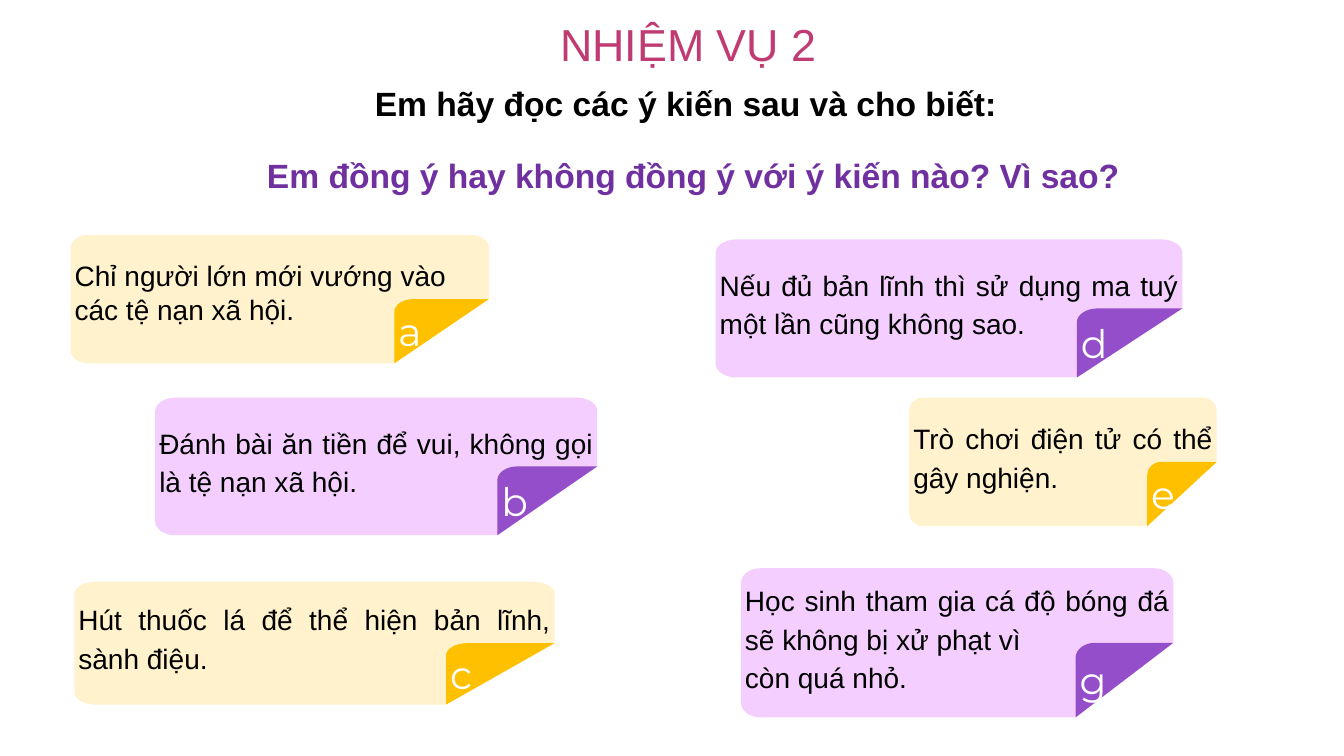
from lxml.etree import SubElement
from pptx import Presentation
from pptx.dml.color import RGBColor
from pptx.enum.shapes import MSO_SHAPE
from pptx.enum.text import MSO_ANCHOR, MSO_AUTO_SIZE, PP_ALIGN
from pptx.oxml.ns import qn
from pptx.util import Inches, Pt

WHITE = RGBColor(0xFF, 0xFF, 0xFF)
BLACK = RGBColor(0x00, 0x00, 0x00)
ROSE = RGBColor(0xBF, 0x3B, 0x72)
PURPLE = RGBColor(0x70, 0x30, 0xA0)
CREAM = RGBColor(0xFF, 0xF2, 0xCC)
GOLD = RGBColor(0xFF, 0xC0, 0x00)
LILAC = RGBColor(0xF3, 0xCE, 0xFE)
VIOLET = RGBColor(0x95, 0x4E, 0xCA)
WARM, COOL = (CREAM, GOLD), (LILAC, VIOLET)

CARDS = [
    ("a", "Chỉ người lớn mới vướng vào các tệ nạn xã hội.",
     (7, 23.3, 41.5, 12.75), WARM, PP_ALIGN.LEFT, 1),
    ("d", "Nếu đủ bản lĩnh thì sử dụng ma tuý một lần cũng không sao.",
     (71, 23.75, 46.3, 13.7), COOL, PP_ALIGN.JUSTIFY, 1.15),
    ("b", "Đánh bài ăn tiền để vui, không gọi là tệ nạn xã hội.",
     (15.4, 39.45, 43.85, 13.65), COOL, PP_ALIGN.JUSTIFY, 1.15),
    ("c", "Hút thuốc lá để thể hiện bản lĩnh, sành điệu.",
     (7.37, 57.7, 47.65, 12.2), WARM, PP_ALIGN.JUSTIFY, 1.15),
    ("g", "Học sinh tham gia cá độ bóng đá sẽ không bị xử phạt vì\ncòn quá nhỏ.",
     (73.5, 56.37, 42.9, 14.8), COOL, PP_ALIGN.JUSTIFY, 1.15),
    ("e", "Trò chơi điện tử có thể gây nghiện.",
     (90.2, 39.45, 30.5, 12.75), WARM, PP_ALIGN.JUSTIFY, 1.15),
]


def grid(*units):
    """Turn grid columns or rows, a tenth of an inch each, into lengths."""
    return [Inches(unit / 10) for unit in units]


def write(frame, text, font="Arial", size=20, color=BLACK, bold=False,
          align=PP_ALIGN.LEFT, anchor=MSO_ANCHOR.TOP, lead=1, pad=(1, 0.5, 1, 0.5)):
    """Fill a text frame, one paragraph for each line of the text."""
    frame.word_wrap = True
    frame.auto_size = MSO_AUTO_SIZE.NONE
    frame.vertical_anchor = anchor
    (frame.margin_left, frame.margin_top,
     frame.margin_right, frame.margin_bottom) = grid(*pad)
    for row, line in enumerate(text.split("\n")):
        para = frame.add_paragraph() if row else frame.paragraphs[0]
        para.alignment, para.line_spacing = align, lead
        run = para.add_run()
        run.text = line
        run.font.name, run.font.size, run.font.bold = font, Pt(size), bold
        run.font.color.rgb = color


def bend(start, peak, end):
    """List two handles and the end of a curve that rounds off a peak."""
    return [tuple(a + (b - a) * 0.55 for a, b in zip(spot, peak))
            for spot in (start, end)] + [end]


class Deck:
    """Holds the style and the current slide."""

    def __init__(self):
        """Open a deck with one title-only slide."""
        self.show = Presentation()
        self.show.slide_width, self.show.slide_height = grid(133.33, 75)
        self.slide = self.show.slides.add_slide(self.show.slide_layouts[5])

    def paint(self, shape, fill):
        """Give a shape a plain fill."""
        shape.fill.solid()
        shape.fill.fore_color.rgb = fill
        shape.line.fill.background()

    def title(self, text, box):
        """Place and format the title."""
        head = self.slide.shapes.title
        head.left, head.top, head.width, head.height = grid(*box)
        self.paint(head, WHITE)
        write(head.text_frame, text, size=32, color=ROSE,
              align=PP_ALIGN.CENTER, pad=(1, 1, 1, 1))

    def panel(self, text, box):
        """Add a white rectangle with a bold line of text."""
        area = self.slide.shapes.add_shape(MSO_SHAPE.RECTANGLE, *grid(*box))
        area.shadow.inherit = False
        self.paint(area, WHITE)
        write(area.text_frame, text, size=24, bold=True)

    def label(self, text, box):
        """Add a bold line of text."""
        area = self.slide.shapes.add_textbox(*grid(*box))
        write(area.text_frame, text, size=24, color=PURPLE, bold=True)

    def form(self, start, steps, fill):
        """Draw a closed outline from steps of one point or of a curve's three."""
        pen = self.slide.shapes.build_freeform(*grid(*start))
        pen.add_line_segments([grid(*spot) for step in steps for spot in step])
        shape = pen.convert_to_shape()
        lines = shape.element.iter(qn("a:lnTo"))
        lines = iter(list(lines))
        for step in steps:
            group = [next(lines) for _ in step]
            if len(group) == 3:
                curve = SubElement(group[0].getparent(), qn("a:cubicBezTo"))
                group[0].addprevious(curve)
                for line in group:
                    curve.append(line[0])
                    line.getparent().remove(line)
        shape.shadow.inherit = False
        self.paint(shape, fill)
        return shape.text_frame

    def card(self, mark, text, box, tones, align, lead):
        """Draw a note with a folded corner that holds its letter."""
        left, top, wide, high = box
        right, base = left + wide, top + high
        fold, mid = left + wide * 0.774, top + high / 2
        run, drop = wide * 0.045, high * 0.1
        start = (right - run, top)
        note = [
            [(left + run, top)],
            bend((left + run, top), (left, top), (left, top + drop)),
            [(left, base - drop)],
            bend((left, base - drop), (left, base), (left + run, base)),
            [(fold, base)],
            [(right, mid)],
            [(right, top + drop)],
            bend((right, top + drop), (right, top), start),
        ]
        brim = (fold, mid + drop)
        flap = [
            [(fold, base)],
            [(right, mid)],
            [(fold + run, mid)],
            bend((fold + run, mid), (fold, mid), brim),
        ]
        write(self.form(start, note, tones[0]), text, align=align, lead=lead,
              anchor=MSO_ANCHOR.MIDDLE, pad=(0.4, 0.4, 0.4, 1.7))
        write(self.form(brim, flap, tones[1]), mark, font="Montserrat", size=28,
              color=WHITE, anchor=MSO_ANCHOR.MIDDLE, pad=(0.4,) * 4)


def main():
    """Build the slide and save it."""
    deck = Deck()
    for card in CARDS:
        deck.card(*card)
    deck.title("NHIỆM VỤ 2", (54.3, 0.65, 28, 7.3))
    deck.panel("Em hãy đọc các ý kiến sau và cho biết:", (36.2, 7.7, 65.9, 5))
    deck.label("Em đồng ý hay không đồng ý với ý kiến nào? Vì sao?",
               (25.5, 14.85, 92, 5))
    deck.show.save("out.pptx")


if __name__ == "__main__":
    main()
